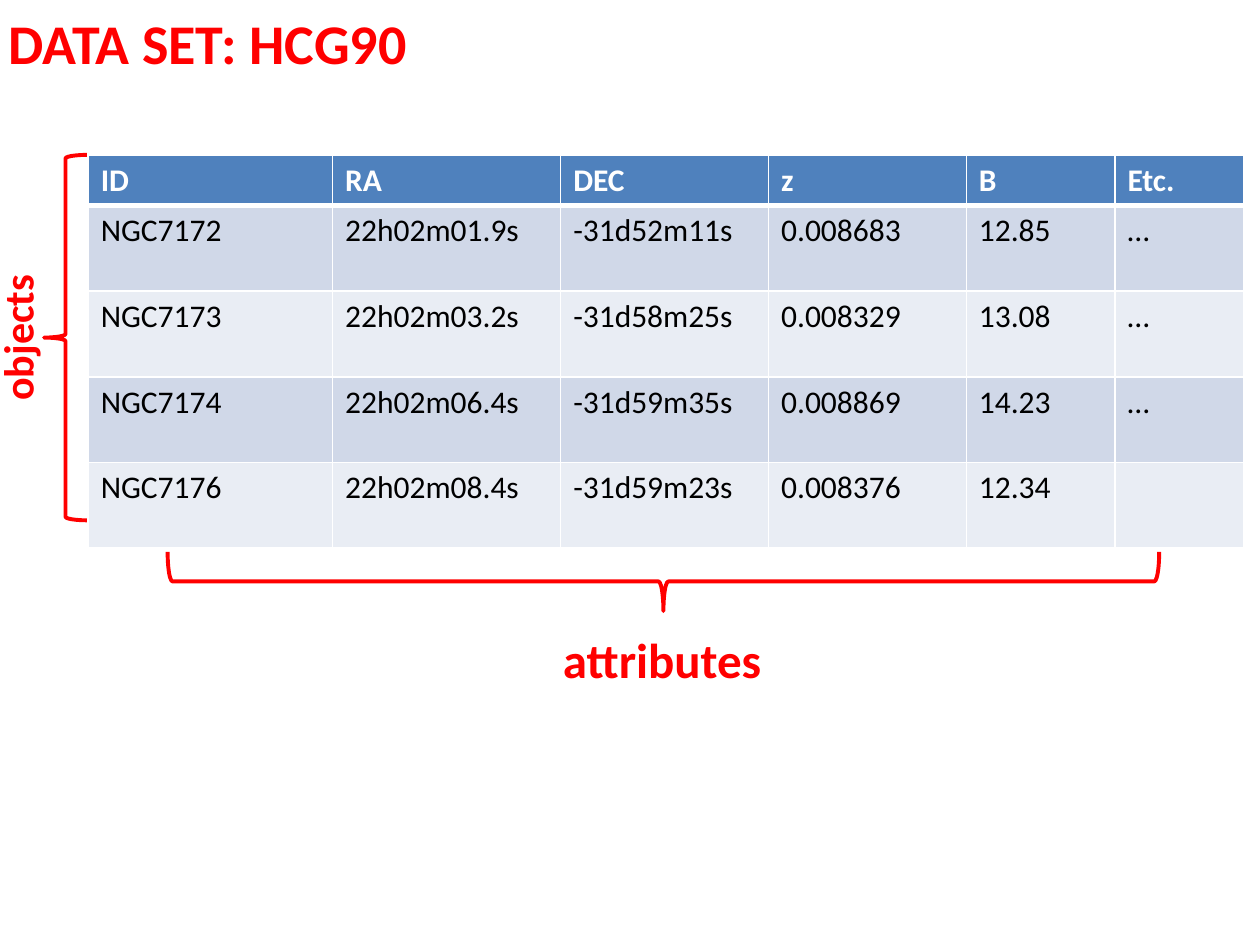
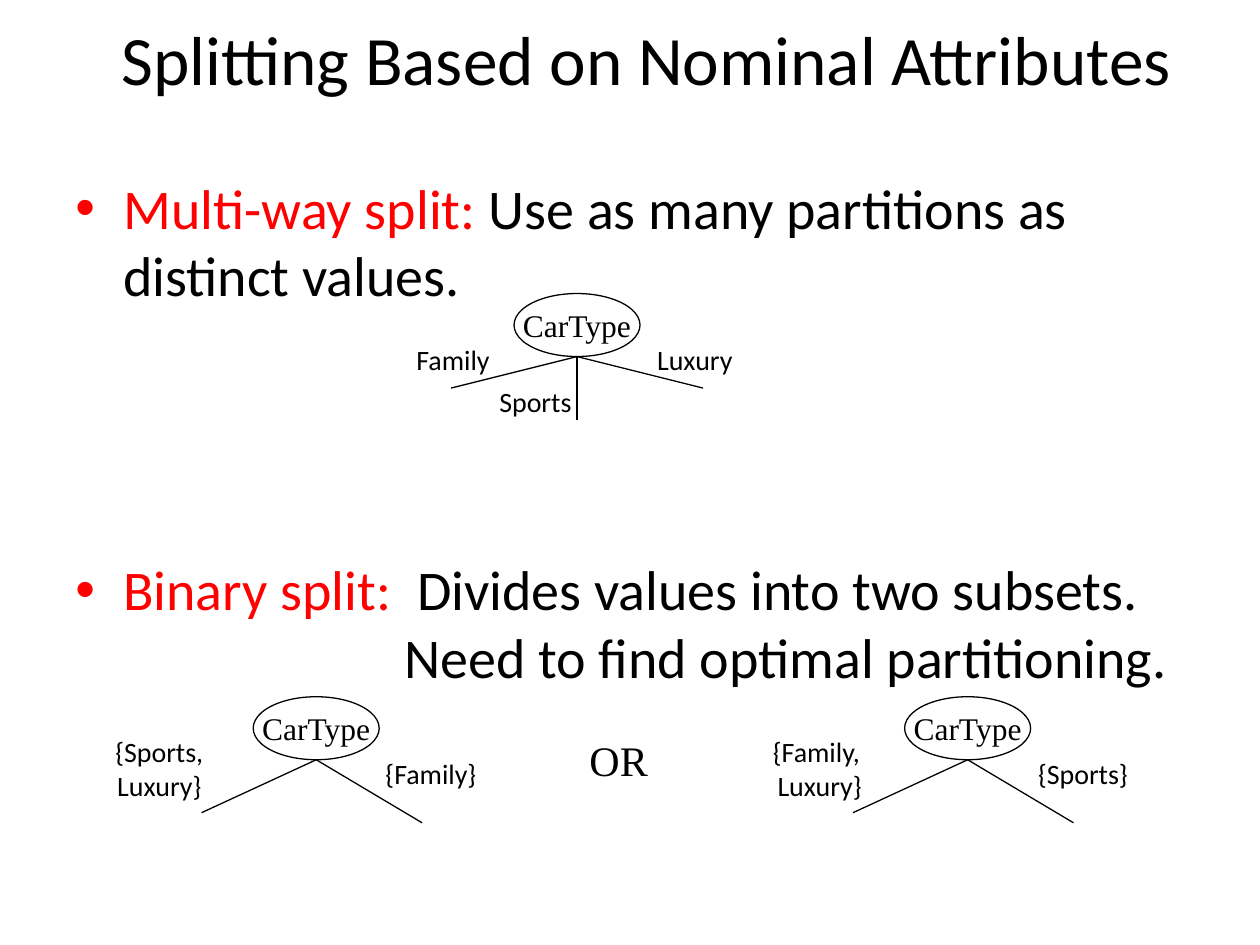
import pptx
import pptx.dml.color
import pptx.enum.shapes
import pptx.enum.text
import pptx.oxml.ns
import pptx.util
from lxml import etree

Inches = pptx.util.Inches
Pt = pptx.util.Pt
SHAPE = pptx.enum.shapes.MSO_SHAPE
ALIGN = pptx.enum.text.PP_ALIGN
ANCHOR = pptx.enum.text.MSO_ANCHOR
qn = pptx.oxml.ns.qn

COLORS = {"red": "FF0000", "black": "000000", "white": "FFFFFF",
          "header": "4F81BD", "odd": "D0D8E8", "even": "E9EDF4"}
SANS, SERIF = "Calibri", "Times New Roman"

GALAXIES = [
    ("ID", "RA", "DEC", "z", "B", "Etc."),
    ("NGC7172", "22h02m01.9s", "-31d52m11s", "0.008683", "12.85", "…"),
    ("NGC7173", "22h02m03.2s", "-31d58m25s", "0.008329", "13.08", "…"),
    ("NGC7174", "22h02m06.4s", "-31d59m35s", "0.008869", "14.23", "…"),
    ("NGC7176", "22h02m08.4s", "-31d59m23s", "0.008376", "12.34", ""),
]
COLUMN_WIDTHS = [1.94, 1.81, 1.65, 1.57, 1.18, 1.02]
HEADER_HEIGHT, ROW_HEIGHT = 0.39, 0.68

# shape, (left, top, width, height), rotation
BRACES = [
    (SHAPE.RIGHT_BRACE, (5.03, 0.68, 0.47, 7.87), 90),
    (SHAPE.LEFT_BRACE, (0.35, 1.23, 0.34, 2.9), 0),
]

# (text, colour) runs, left margin, bulleted, space before in points
SPLIT_KINDS = [
    ([("Multi-way split:", "red"),
      (" Use as many partitions as distinct values.", "black")], 0.38, True, 6.4),
    ([("Binary split: ", "red"),
      (" Divides values into two subsets.", "black")], 0.38, True, 141),
    ([("Need to find optimal partitioning.", "black")], 2.61, False, 0),
]

# node's left and top, branch ends relative to its bottom, (label, box)
MULTI_BRANCHES = [(-1, 0.25), (0, 0.5), (1, 0.25)]
BINARY_BRANCHES = [(-0.91, 0.42), (0.84, 0.5)]
TREES = [
    ((4.08, 2.33), MULTI_BRANCHES,
     [("Family", (3.17, 2.67, 0.85, 0.37)),
      ("Sports", (3.83, 3, 0.84, 0.37)),
      ("Luxury", (5.08, 2.67, 0.87, 0.37))]),
    ((7.18, 5.53), BINARY_BRANCHES,
     [("{Family, \nLuxury}", (5.98, 5.78, 1.05, 0.64)),
      ("{Sports}", (8.1, 5.95, 0.99, 0.37))]),
    ((2.01, 5.53), BINARY_BRANCHES,
     [("{Sports,\nLuxury}", (0.75, 5.78, 1.03, 0.64)),
      ("{Family}", (2.92, 5.95, 1, 0.37))]),
]
NODE_WIDTH, NODE_HEIGHT = 1, 0.5


def rgb(name):
    return pptx.dml.color.RGBColor.from_string(COLORS[name])


def add_span(para, text, size, color="black", font=SANS, bold=False):
    span = para.add_run()
    span.text = text
    span.font.size = Pt(size)
    span.font.name = font
    span.font.bold = bold
    span.font.color.rgb = rgb(color)


def write_lines(frame, text, size, align=ALIGN.CENTER, wrap=False, **style):
    """Fill a text frame with one paragraph, breaking it at each newline."""
    frame.word_wrap = wrap
    para = frame.paragraphs[0]
    para.alignment = align
    for number, line in enumerate(text.split("\n")):
        if number:
            para.add_line_break()
        add_span(para, line, size, **style)


def add_label(page, text, place, size, anchor=ANCHOR.MIDDLE, rotation=0, **style):
    box = page.shapes.add_textbox(*map(Inches, place))
    box.rotation = rotation
    box.text_frame.vertical_anchor = anchor
    write_lines(box.text_frame, text, size, **style)


def add_outline(page, kind, place, color, width):
    shape = page.shapes.add_shape(kind, *map(Inches, place))
    shape.shadow.inherit = False
    shape.line.color.rgb = rgb(color)
    shape.line.width = Pt(width)
    return shape


def add_border(cell, side, color, width):
    border = etree.Element(qn("a:" + side), w=str(Pt(width)))
    paint = etree.SubElement(border, qn("a:solidFill"))
    etree.SubElement(paint, qn("a:srgbClr"), val=COLORS[color])
    cell._tc.get_or_add_tcPr().insert(0, border)


def add_galaxy_table(page):
    height = HEADER_HEIGHT + ROW_HEIGHT * (len(GALAXIES) - 1)
    table = page.shapes.add_table(
        len(GALAXIES), len(COLUMN_WIDTHS), Inches(0.7), Inches(1.23),
        Inches(sum(COLUMN_WIDTHS)), Inches(height)).table
    for column, width in zip(table.columns, COLUMN_WIDTHS):
        column.width = Inches(width)
    for number, values in enumerate(GALAXIES):
        is_header = number == 0
        table.rows[number].height = Inches(HEADER_HEIGHT if is_header else ROW_HEIGHT)
        fill = "header" if is_header else "odd" if number % 2 else "even"
        for column, value in enumerate(values):
            cell = table.cell(number, column)
            cell.fill.solid()
            cell.fill.fore_color.rgb = rgb(fill)
            if is_header:
                add_border(cell, "lnB", "white", 3)
            if value:
                add_span(cell.text_frame.paragraphs[0], value, 18,
                         "white" if is_header else "black", bold=is_header)


def add_bullet(para, color):
    properties = para._p.get_or_add_pPr()
    paint = etree.SubElement(properties, qn("a:buClr"))
    etree.SubElement(paint, qn("a:srgbClr"), val=COLORS[color])
    etree.SubElement(properties, qn("a:buFont"), typeface="Arial")
    etree.SubElement(properties, qn("a:buChar"), char="•")


def add_split_kinds(page):
    box = page.shapes.add_textbox(*map(Inches, (0.5, 1.33, 9.17, 4.08)))
    frame = box.text_frame
    frame.word_wrap = True
    for number, (spans, margin, bulleted, space) in enumerate(SPLIT_KINDS):
        para = frame.add_paragraph() if number else frame.paragraphs[0]
        para.space_before = Pt(space)
        properties = para._p.get_or_add_pPr()
        properties.set("marL", str(Inches(margin)))
        properties.set("indent", str(-Inches(margin) if bulleted else 0))
        if bulleted:
            add_bullet(para, "red")
        for text, color in spans:
            add_span(para, text, 32, color)


def add_branch(page, start, end):
    line = page.shapes.add_connector(
        pptx.enum.shapes.MSO_CONNECTOR.STRAIGHT, *map(Inches, start + end))
    line.line.color.rgb = rgb("black")
    line.line.width = Pt(0.75)
    etree.SubElement(line._element.spPr, qn("a:effectLst"))


def add_tree(page, corner, branches, labels):
    left, top = corner
    node = add_outline(page, SHAPE.OVAL, (left, top, NODE_WIDTH, NODE_HEIGHT),
                       "black", 0.75)
    node.fill.solid()
    node.fill.fore_color.rgb = rgb("white")
    node.text_frame.vertical_anchor = ANCHOR.MIDDLE
    write_lines(node.text_frame, "CarType", 18, font=SERIF)
    x, y = left + NODE_WIDTH / 2, top + NODE_HEIGHT
    for across, down in branches:
        add_branch(page, (x, y), (x + across, y + down))
    for text, place in labels:
        add_label(page, text, place, 16)


def build_data_set(page):
    emphasis = {"color": "red", "bold": True, "anchor": ANCHOR.TOP}
    add_label(page, "DATA SET: HCG90", (-0.03, 0.02, 5.3, 0.64), 32,
              align=ALIGN.LEFT, wrap=True, **emphasis)
    add_galaxy_table(page)
    for kind, place, rotation in BRACES:
        brace = add_outline(page, kind, place, "red", 2.25)
        brace.fill.background()
        brace.rotation = rotation
    add_label(page, "attributes", (4.35, 4.95, 1.81, 0.57), 28, **emphasis)
    add_label(page, "objects", (-0.47, 2.43, 1.21, 0.5), 24, rotation=270, **emphasis)


def build_splitting(page):
    add_label(page, "Splitting Based on Nominal Attributes",
              (0.42, 0.17, 9.42, 0.58), 39.6, wrap=True)
    add_split_kinds(page)
    for tree in TREES:
        add_tree(page, *tree)
    add_label(page, "OR", (4.58, 5.78, 0.66, 0.5), 24, font=SERIF)


def main():
    deck = pptx.Presentation()
    deck.slide_width, deck.slide_height = Inches(10), Inches(7.5)
    for build in (build_data_set, build_splitting):
        build(deck.slides.add_slide(deck.slide_layouts[6]))
    deck.save("out.pptx")


if __name__ == "__main__":
    main()
